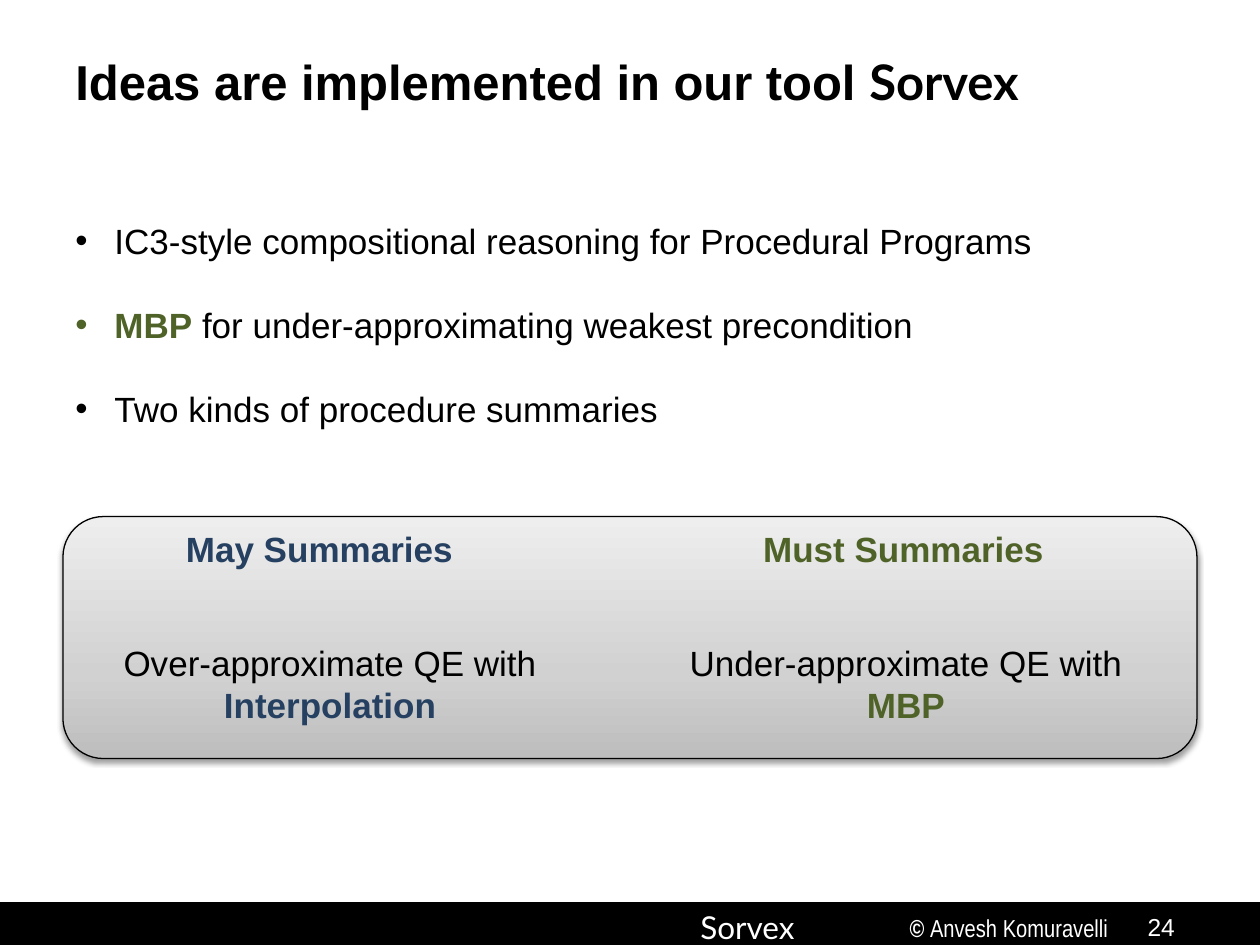
import pptx
import pptx.dml.color
import pptx.enum.shapes
import pptx.enum.text
import pptx.oxml
import pptx.oxml.ns
import pptx.util

BLACK = pptx.dml.color.RGBColor(0x00, 0x00, 0x00)
WHITE = pptx.dml.color.RGBColor(0xFF, 0xFF, 0xFF)
NAVY = pptx.dml.color.RGBColor(0x25, 0x40, 0x61)
OLIVE = pptx.dml.color.RGBColor(0x4F, 0x62, 0x28)
GREY_STOPS = [(0, "BDBDBD"), (35, "D1D1D1"), (100, "EEEEEE")]

SHAPES = pptx.enum.shapes.MSO_SHAPE
ANCHOR = pptx.enum.text.MSO_ANCHOR
ALIGN = pptx.enum.text.PP_ALIGN
CELL = pptx.util.Inches(0.5)  # the slide is 20 columns by 15 rows
DRAWING = pptx.oxml.ns.nsdecls("a")
TOOL = "Sorvex"


def add_span(para, text, size=20, font="Arial", color=BLACK, bold=False):
    span = para.add_run()
    span.text = text
    span.font.size = pptx.util.Pt(size)
    span.font.name = font
    span.font.bold = bold
    span.font.color.rgb = color


class SlideBuilder:
    def __init__(self, slide):
        self.slide = slide

    def place(self, *cells):
        return [round(cell * CELL) for cell in cells]

    def text(self, cells, paragraphs, align=ALIGN.LEFT, anchor=ANCHOR.TOP,
             inset=0.1, gap=0, bullet=False):
        """Add a text box; each paragraph is a list of (text, format) pairs."""
        box = self.slide.shapes.add_textbox(*self.place(*cells))
        frame = box.text_frame
        frame.word_wrap = True
        frame.vertical_anchor = anchor
        frame.margin_left = frame.margin_right = pptx.util.Inches(inset)
        for index, spans in enumerate(paragraphs):
            para = frame.paragraphs[0] if index == 0 else frame.add_paragraph()
            para.alignment = align
            if index:
                para.space_before = pptx.util.Pt(gap)
            for text, style in spans:
                add_span(para, text, **style)
            if bullet:
                self.add_bullet(para)

    def add_bullet(self, para):
        properties = para._p.get_or_add_pPr()
        indent = pptx.util.Inches(0.31)
        properties.set("marL", str(indent))
        properties.set("indent", str(-indent))
        for xml in ('<a:buFont {} typeface="Arial"/>', '<a:buChar {} char="•"/>'):
            properties.append(pptx.oxml.parse_xml(xml.format(DRAWING)))

    def bar(self, cells):
        bar = self.slide.shapes.add_shape(SHAPES.RECTANGLE, *self.place(*cells))
        bar.shadow.inherit = False
        bar.fill.solid()
        bar.fill.fore_color.rgb = BLACK
        bar.line.fill.background()

    def panel(self, cells):
        """Add a rounded panel, shaded upwards from dark to light, with a soft shadow."""
        panel = self.slide.shapes.add_shape(
            SHAPES.ROUNDED_RECTANGLE, *self.place(*cells))
        panel.line.color.rgb = BLACK
        panel.line.width = pptx.util.Pt(0.75)
        panel.fill.gradient()
        panel.fill.gradient_angle = 90
        stops = panel._element.spPr.find(".//" + pptx.oxml.ns.qn("a:gsLst"))
        for stop in list(stops):
            stops.remove(stop)
        for position, color in GREY_STOPS:
            stops.append(pptx.oxml.parse_xml(
                f'<a:gs {DRAWING} pos="{position * 1000}">'
                f'<a:srgbClr val="{color}"/></a:gs>'))
        panel.shadow.inherit = False
        effects = panel._element.spPr.find(pptx.oxml.ns.qn("a:effectLst"))
        effects.append(pptx.oxml.parse_xml(
            f'<a:outerShdw {DRAWING} blurRad="40000" dist="20000" dir="5400000" '
            'rotWithShape="0"><a:srgbClr val="000000"><a:alpha val="38000"/>'
            '</a:srgbClr></a:outerShdw>'))

    def summary(self, heading_cells, body_cells, heading, action, method, color):
        accent = {"color": color, "bold": True}
        self.text(heading_cells, [[(heading, accent)]], align=ALIGN.CENTER)
        self.text(body_cells, [[(action, {})], [(method, accent)]],
                  align=ALIGN.CENTER)


def main():
    deck = pptx.Presentation()
    deck.slide_width, deck.slide_height = 20 * CELL, 15 * CELL
    page = SlideBuilder(deck.slides.add_slide(deck.slide_layouts[6]))

    page.bar((0, 14.32, 20, 0.68))
    page.text((14.34, 14.38, 4.12, 0.68), [[
        ("© ", {"size": 14, "font": "Arial Narrow", "color": WHITE, "bold": True}),
        ("Anvesh Komuravelli", {"size": 14, "font": "Arial Narrow", "color": WHITE}),
    ]], anchor=ANCHOR.MIDDLE, inset=0.05)
    page.text((10.92, 14.32, 3.04, 0.8),
              [[(TOOL, {"size": 18, "font": "Lato", "color": WHITE})]])
    page.text((18.02, 14.38, 1, 0.58), [[("24", {"size": 14, "color": WHITE})]])

    page.text((1, 0.6, 18, 1.38), [[
        ("Ideas are implemented in our tool ", {"size": 28, "bold": True}),
        (TOOL, {"size": 28, "font": "Lato", "bold": True}),
    ]], anchor=ANCHOR.MIDDLE)
    page.text((1, 3.38, 17, 3.56), [
        [("IC3-style compositional reasoning for Procedural Programs", {})],
        [("MBP", {"color": OLIVE, "bold": True}),
         (" for under-approximating weakest precondition", {})],
        [("Two kinds of procedure summaries", {})],
    ], gap=24, bullet=True)

    page.panel((1, 8.2, 18, 3.84))
    page.summary((2.66, 8.28, 4.82, 0.88), (1.62, 10.08, 7.24, 1.54),
                 "May Summaries", "Over-approximate QE with", "Interpolation", NAVY)
    page.summary((11.82, 8.28, 5.04, 0.88), (10.6, 10.08, 7.56, 1.54),
                 "Must Summaries", "Under-approximate QE with", "MBP", OLIVE)

    deck.save("out.pptx")


if __name__ == "__main__":
    main()
